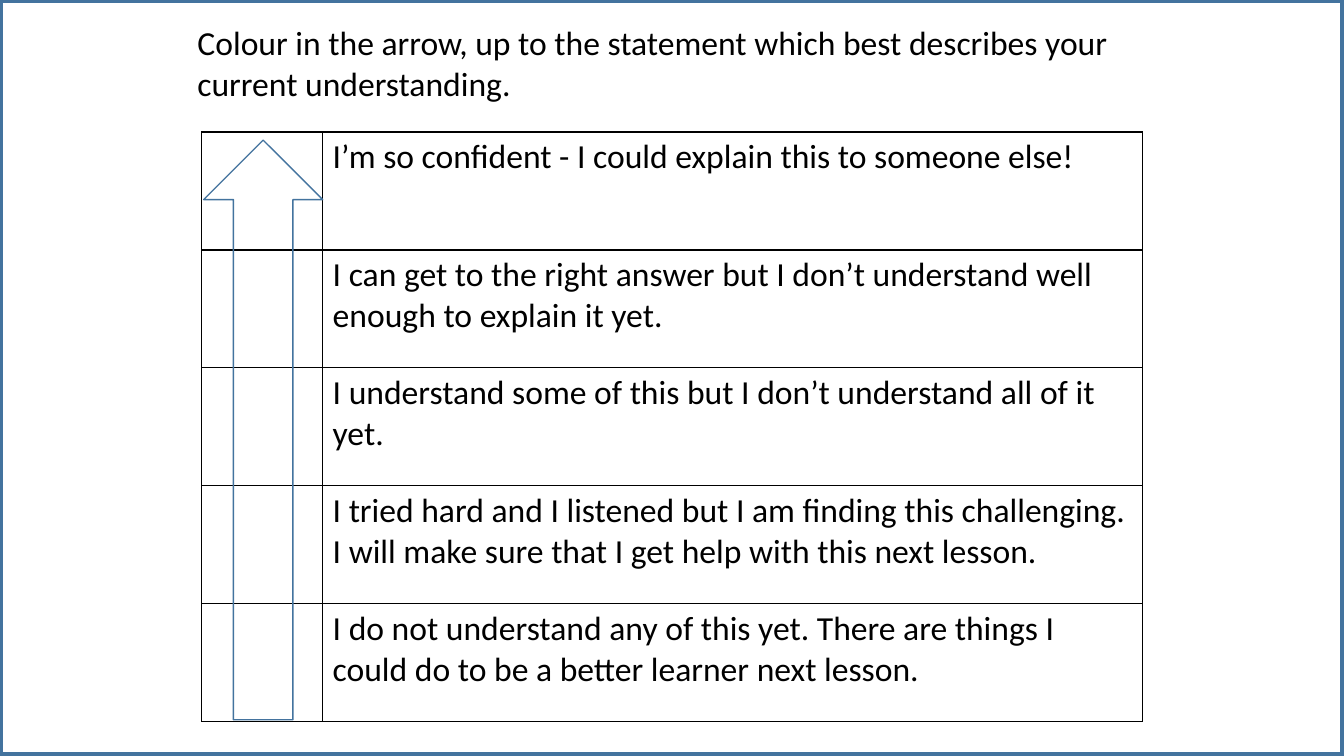
from pptx import Presentation
from pptx.dml.color import RGBColor
from pptx.enum.shapes import MSO_SHAPE as Shape
from pptx.oxml import parse_xml
from pptx.oxml.ns import nsdecls
from pptx.util import Inches, Pt

COLORS = {"white": "FFFFFF", "black": "000000", "blue": "43739E"}
SLIDE_WIDTH, SLIDE_HEIGHT = 13.33, 7.5
PROMPT = "Colour in the arrow, up to the statement which best describes your current understanding."
STATEMENTS = [
    "I’m so confident - I could explain this to someone else!",
    "I can get to the right answer but I don’t understand well enough to explain it yet.",
    "I understand some of this but I don’t understand all of it yet.",
    "I tried hard and I listened but I am finding this challenging. "
    "I will make sure that I get help with this next lesson.",
    "I do not understand any of this yet. "
    "There are things I could do to be a better learner next lesson.",
]


def write_text(text_frame, text, size=24, font="Calibri", color="black"):
    text_frame.word_wrap = True
    run = text_frame.paragraphs[0].add_run()
    run.text = text
    run.font.size = Pt(size)
    run.font.name = font
    run.font.color.rgb = RGBColor.from_string(COLORS[color])


class SlideBuilder:
    def __init__(self, slide, line_color="blue", border_color="black"):
        self.slide = slide
        self.line_color = line_color
        self.border_color = border_color

    def outline(self, kind, left, top, width, height, line_width):
        """Add an unfilled preset shape."""
        shape = self.slide.shapes.add_shape(
            kind, Inches(left), Inches(top), Inches(width), Inches(height))
        shape.shadow.inherit = False
        shape.fill.background()
        shape.line.color.rgb = RGBColor.from_string(COLORS[self.line_color])
        shape.line.width = Pt(line_width)
        return shape

    def text_box(self, text, left, top, width, height):
        box = self.slide.shapes.add_textbox(
            Inches(left), Inches(top), Inches(width), Inches(height))
        box.fill.solid()
        box.fill.fore_color.rgb = RGBColor.from_string(COLORS["white"])
        write_text(box.text_frame, text)

    def border(self, cell, width=1):
        properties = cell._tc.get_or_add_tcPr()
        for index, side in enumerate("LRTB"):
            properties.insert(index, parse_xml(
                f'<a:ln{side} {nsdecls("a")} w="{Pt(width)}"><a:solidFill>'
                f'<a:srgbClr val="{COLORS[self.border_color]}"/>'
                f'</a:solidFill></a:ln{side}>'))

    def statement_table(self, statements, left, top, column_widths, row_height):
        """Add a table with an empty first column and the statements in the second."""
        table = self.slide.shapes.add_table(
            len(statements), len(column_widths), Inches(left), Inches(top),
            Inches(sum(column_widths)), Inches(row_height * len(statements))).table
        table.first_row = table.horz_banding = False
        for column, width in zip(table.columns, column_widths):
            column.width = Inches(width)
        for row, statement in zip(table.rows, statements):
            row.height = Inches(row_height)
            for cell in row.cells:
                cell.fill.background()
                self.border(cell)
            write_text(row.cells[1].text_frame, statement)


def main():
    presentation = Presentation()
    presentation.slide_width = Inches(SLIDE_WIDTH)
    presentation.slide_height = Inches(SLIDE_HEIGHT)
    slide = presentation.slides.add_slide(presentation.slide_layouts[6])
    builder = SlideBuilder(slide)
    builder.statement_table(STATEMENTS, 2, 1.31, [1.2, 8.13], 1.17)
    builder.outline(Shape.UP_ARROW, 2.02, 1.39, 1.18, 5.75, line_width=1)
    builder.text_box(PROMPT, 1.86, 0.17, 9.39, 0.91)
    builder.outline(Shape.RECTANGLE, 0, 0, SLIDE_WIDTH, SLIDE_HEIGHT, line_width=5)
    presentation.save("out.pptx")


if __name__ == "__main__":
    main()
